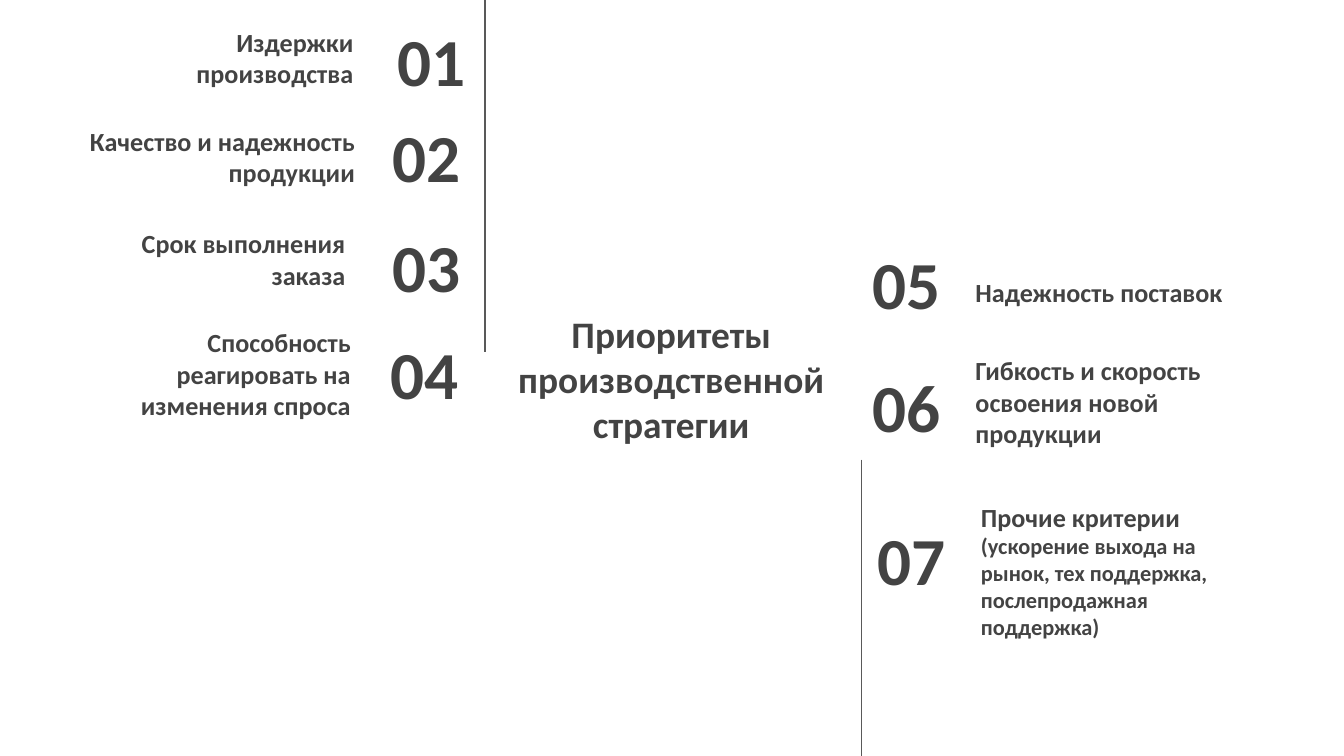
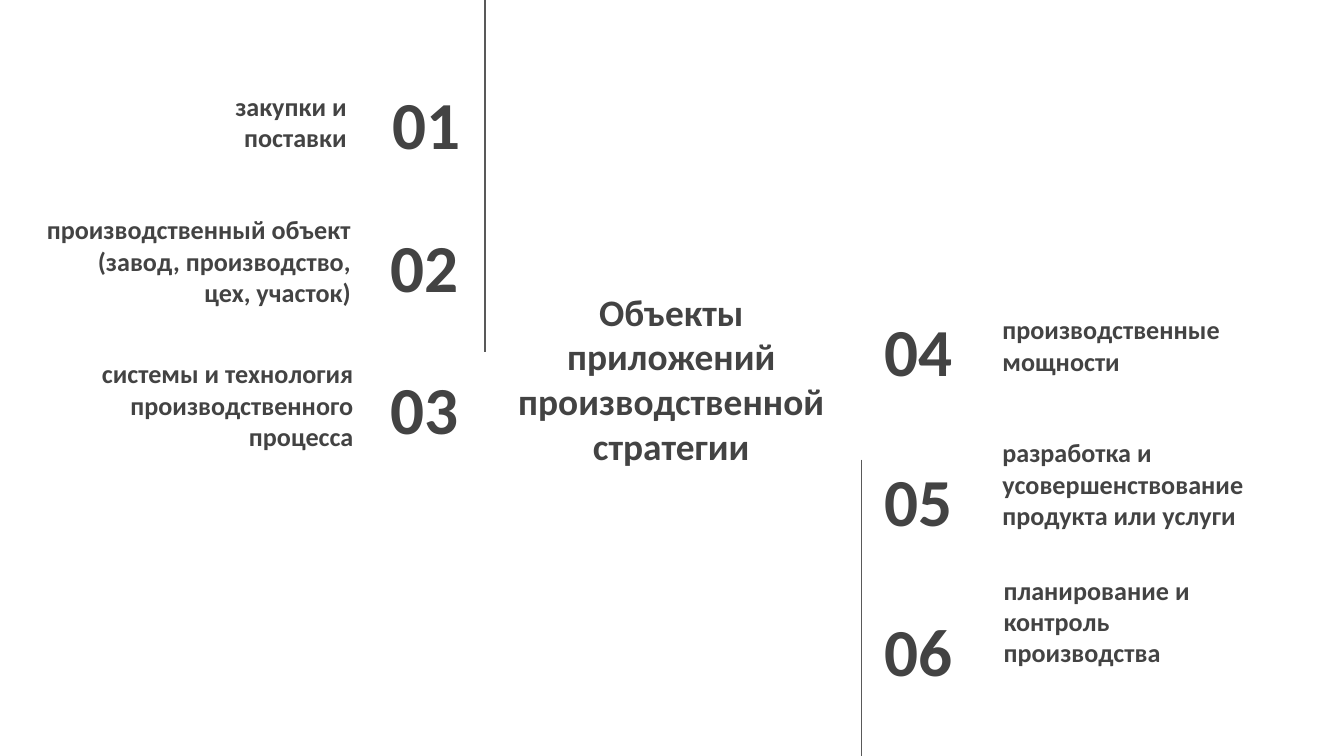
from typing import NamedTuple

from lxml import etree
from pptx import Presentation
from pptx.dml.color import RGBColor
from pptx.enum.shapes import MSO_CONNECTOR
from pptx.enum.text import MSO_ANCHOR, MSO_AUTO_SIZE, PP_ALIGN
from pptx.oxml.ns import qn
from pptx.util import Pt

LEFT, MID, RIGHT = PP_ALIGN.LEFT, PP_ALIGN.CENTER, PP_ALIGN.RIGHT
MIDDLE, BOTTOM = MSO_ANCHOR.MIDDLE, MSO_ANCHOR.BOTTOM
NO_FIT = MSO_AUTO_SIZE.NONE
STRAIGHT = MSO_CONNECTOR.STRAIGHT

WIDTH, HEIGHT = 720, 405
FONT = "Calibri"
INK = "434343"
RULE = "595959"
INSET = 7.2
ROW = 45.4


class Box(NamedTuple):
    x: float
    y: float
    w: float
    h: float = ROW


class Run(NamedTuple):
    text: str
    size: float = 14


class Item(NamedTuple):
    num_x: float
    num_y: float
    x: float
    y: float
    runs: list[Run]
    w: float = 155.5


class Line(NamedTuple):
    x: float
    top: float
    end: float


class Page(NamedTuple):
    title: str
    items: list[Item]


TITLE = Box(266.4, 165.6, 186.5, 74.2)
LINES = [Line(259.9, 0, 188.6), Line(461.5, 246.2, HEIGHT)]

PAGES = [
    Page("Приоритеты производственной стратегии", [
        Item(169.2, 9.4, 41, 9.4, [Run("Издержки производства")]),
        Item(167, 60.5, 20.2, 62.6, [Run("Качество и надежность продукции")], 177.1),
        Item(167, 119.5, 36.7, 117.4, [Run("Срок выполнения заказа")]),
        Item(165.6, 177.1, 39.6, 187.2,
             [Run("Способность реагировать на изменения спроса")]),
        Item(460.1, 128.9, 515.5, 126.7, [Run("Надежность поставок")]),
        Item(460.1, 194.4, 515.5, 202.3,
             [Run("Гибкость и скорость освоения новой продукции")]),
        Item(463, 276.5, 518.4, 304.6, [
            Run("Прочие критерии "),
            Run("(ускорение выхода на рынок, тех поддержка, "
                "послепродажная поддержка)", 12),
        ]),
    ]),
    Page("Объекты приложений производственной стратегии", [
        Item(167, 43.2, 65.5, 43.9, [Run("закупки и поставки")], 127.4),
        Item(165.6, 119.5, 18, 126.7,
             [Run("производственный объект (завод, производство, цех, участок)")],
             177.1),
        Item(165.6, 195.8, 41, 203.8,
             [Run("системы и технология производственного процесса")]),
        Item(466.6, 164.9, 529.9, 163.4, [Run("производственные мощности")]),
        Item(466.6, 244.8, 529.9, 246.2,
             [Run("разработка и усовершенствование продукта или услуги")]),
        Item(466.6, 325.4, 530.6, 319.7,
             [Run("планирование и контроль производства")]),
    ]),
]


def tint(code: str) -> RGBColor:
    return RGBColor.from_string(code)


def write(shape, runs: list[Run], align, anchor) -> None:
    frame = shape.text_frame
    frame.word_wrap = True
    frame.auto_size = NO_FIT
    frame.vertical_anchor = anchor
    frame.margin_left = frame.margin_right = Pt(INSET)
    frame.margin_top = frame.margin_bottom = Pt(INSET)
    para = frame.paragraphs[0]
    para.alignment = align
    for part in runs:
        run = para.add_run()
        run.text = part.text
        run.font.name = FONT
        run.font.size = Pt(part.size)
        run.font.bold = True
        run.font.color.rgb = tint(INK)


def add_text(slide, box: Box, runs: list[Run], align, anchor) -> None:
    shape = slide.shapes.add_textbox(*map(Pt, box))
    write(shape, runs, align, anchor)


def add_title(slide, text: str) -> None:
    shape = slide.shapes.title
    shape.left, shape.top, shape.width, shape.height = map(Pt, TITLE)
    write(shape, [Run(text, 20)], MID, MIDDLE)


def add_line(slide, line: Line) -> None:
    rule = slide.shapes.add_connector(
        STRAIGHT, Pt(line.x), Pt(line.top), Pt(line.x), Pt(line.end))
    rule.line.color.rgb = tint(RULE)
    rule.line.width = Pt(0.75)
    etree.SubElement(rule._element.spPr, qn("a:effectLst"))


def add_item(slide, num: int, item: Item) -> None:
    left = item.x < WIDTH / 2
    align = RIGHT if left else LEFT
    box = Box(item.num_x, item.num_y, 87.1 if left else 84.2)
    add_text(slide, box, [Run(f"{num:02}", 36)], align, MIDDLE)
    add_text(slide, Box(item.x, item.y, item.w), item.runs, align, BOTTOM)


def main() -> None:
    deck = Presentation()
    deck.slide_width, deck.slide_height = Pt(WIDTH), Pt(HEIGHT)
    for page in PAGES:
        slide = deck.slides.add_slide(deck.slide_layouts[5])
        add_title(slide, page.title)
        for line in LINES:
            add_line(slide, line)
        for num, item in enumerate(page.items, 1):
            add_item(slide, num, item)
    deck.save("out.pptx")


if __name__ == "__main__":
    main()
